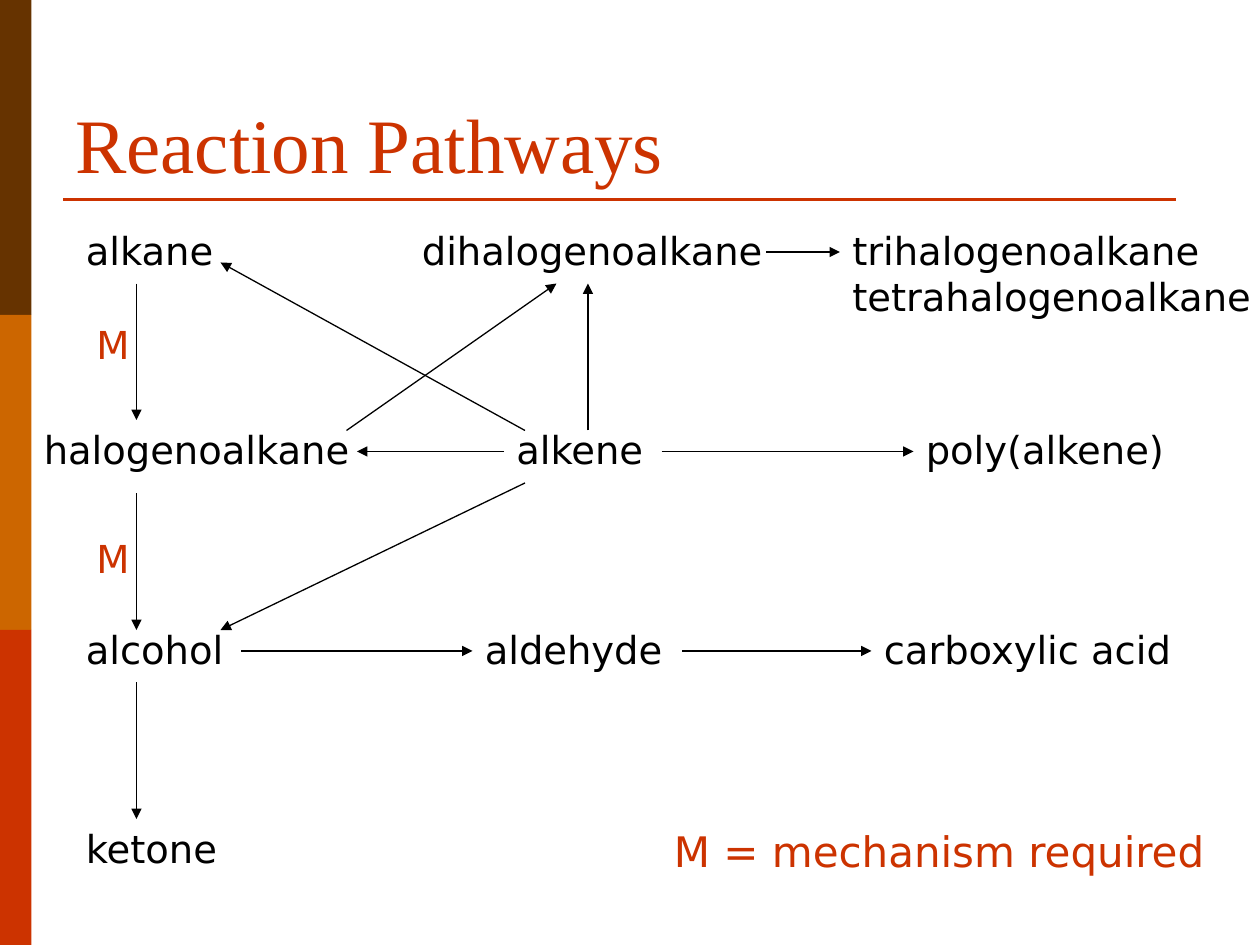
import pptx
import pptx.util
import pptx.dml.color
import pptx.enum.shapes
import pptx.enum.text
import pptx.oxml
import pptx.oxml.ns

RED = pptx.dml.color.RGBColor(0xCC, 0x33, 0x00)
ORANGE = pptx.dml.color.RGBColor(0xCC, 0x66, 0x00)
BROWN = pptx.dml.color.RGBColor(0x66, 0x33, 0x00)
BLACK = pptx.dml.color.RGBColor(0, 0, 0)

# Grid of 120 columns by 90 rows, twelve cells to the inch
COLUMNS, ROWS = 120, 90
CELL = pptx.util.Inches(1) / 12

BODY = {"name": "DejaVu Sans", "size": pptx.util.Pt(22)}
TITLE = {"name": "Times New Roman", "size": pptx.util.Pt(44)}
LEGEND = {"name": "DejaVu Sans", "size": pptx.util.Pt(24)}

BANDS = [BROWN, ORANGE, RED]
BAND_WIDTH = 3

# Rows of the diagram: 19 cells apart
FIRST_ROW, ROW_STEP, LABEL_HEIGHT = 21, 19, 5.6

# (text, diagram row, left column, width)
COMPOUNDS = [
    ("alkane", 0, 7, 29),
    ("dihalogenoalkane", 0, 39, 38),
    ("trihalogenoalkane\ntetrahalogenoalkane", 0, 80, 42),
    ("halogenoalkane", 1, 3, 35),
    ("alkene", 1, 48, 29),
    ("poly(alkene)", 1, 87, 29),
    ("alcohol", 2, 7, 29),
    ("aldehyde", 2, 45, 29),
    ("carboxylic acid", 2, 83, 33),
    ("ketone", 3, 7, 29),
]
MECHANISM_TOPS = [30, 50.4]

# (start column, start row, end column, end row)
REACTIONS = [
    (13, 27, 13, 40),   # alkane to halogenoalkane
    (13, 47, 13, 60),   # halogenoalkane to alcohol
    (13, 65, 13, 78),   # alcohol to ketone
    (33, 41, 53, 27),   # halogenoalkane to dihalogenoalkane
    (50, 41, 21, 25),   # alkene to alkane
    (48, 43, 34, 43),   # alkene to halogenoalkane
    (56, 41, 56, 27),   # alkene to dihalogenoalkane
    (50, 46, 21, 60),   # alkene to alcohol
    (23, 62, 45, 62),   # alcohol to aldehyde
    (65, 62, 83, 62),   # aldehyde to carboxylic acid
    (63, 43, 87, 43),   # alkene to poly(alkene)
    (73, 24, 80, 24),   # dihalogenoalkane to trihalogenoalkane
]


def cells(*counts):
    return [round(count * CELL) for count in counts]


def add_text(slide, text, box, font, color, anchor=pptx.enum.text.MSO_ANCHOR.TOP):
    frame = slide.shapes.add_textbox(*cells(*box)).text_frame
    frame.word_wrap = True
    frame.vertical_anchor = anchor
    paragraph = frame.paragraphs[0]
    paragraph.text = text
    for run in paragraph.runs:
        for name, value in font.items():
            setattr(run.font, name, value)
        run.font.color.rgb = color


def add_line(slide, ends, color, width, arrow=False):
    connector = slide.shapes.add_connector(
        pptx.enum.shapes.MSO_CONNECTOR.STRAIGHT, *cells(*ends))
    connector.line.color.rgb = color
    connector.line.width = pptx.util.Pt(width)
    if arrow:
        outline = connector.line._get_or_add_ln()
        head = pptx.oxml.ns.qn("a:tailEnd")
        outline.append(outline.makeelement(head, {"type": "triangle"}))
    properties = connector._element.spPr
    properties.append(properties.makeelement(pptx.oxml.ns.qn("a:effectLst"), {}))


def main():
    presentation = pptx.Presentation()
    presentation.slide_width, presentation.slide_height = cells(COLUMNS, ROWS)
    slide = presentation.slides.add_slide(presentation.slide_layouts[6])

    # Side bands
    band_height = ROWS / len(BANDS)
    for index, color in enumerate(BANDS):
        band = slide.shapes.add_shape(
            pptx.enum.shapes.MSO_SHAPE.RECTANGLE,
            *cells(0, index * band_height, BAND_WIDTH, band_height))
        band.shadow.inherit = False
        band.fill.solid()
        band.fill.fore_color.rgb = color
        band.line.fill.background()

    # Title and rule
    add_line(slide, (6, 19, 112, 19), RED, 1.5)
    add_text(slide, "Reaction Pathways", (6, 3.6, 108, 15), TITLE, RED,
             pptx.enum.text.MSO_ANCHOR.BOTTOM)

    # Compounds
    for text, row, left, width in COMPOUNDS:
        top = FIRST_ROW + row * ROW_STEP
        height = LABEL_HEIGHT + 4.4 * text.count("\n")
        add_text(slide, text, (left, top, width, height), BODY, BLACK)

    # Reaction arrows
    for ends in REACTIONS:
        add_line(slide, ends, BLACK, 0.75, arrow=True)

    # Mechanism marks and legend
    for top in MECHANISM_TOPS:
        add_text(slide, "M", (8, top, 6, LABEL_HEIGHT), BODY, RED)
    add_text(slide, "M = mechanism required", (63, 78, 54, 6), LEGEND, RED)

    presentation.save("out.pptx")


if __name__ == "__main__":
    main()
